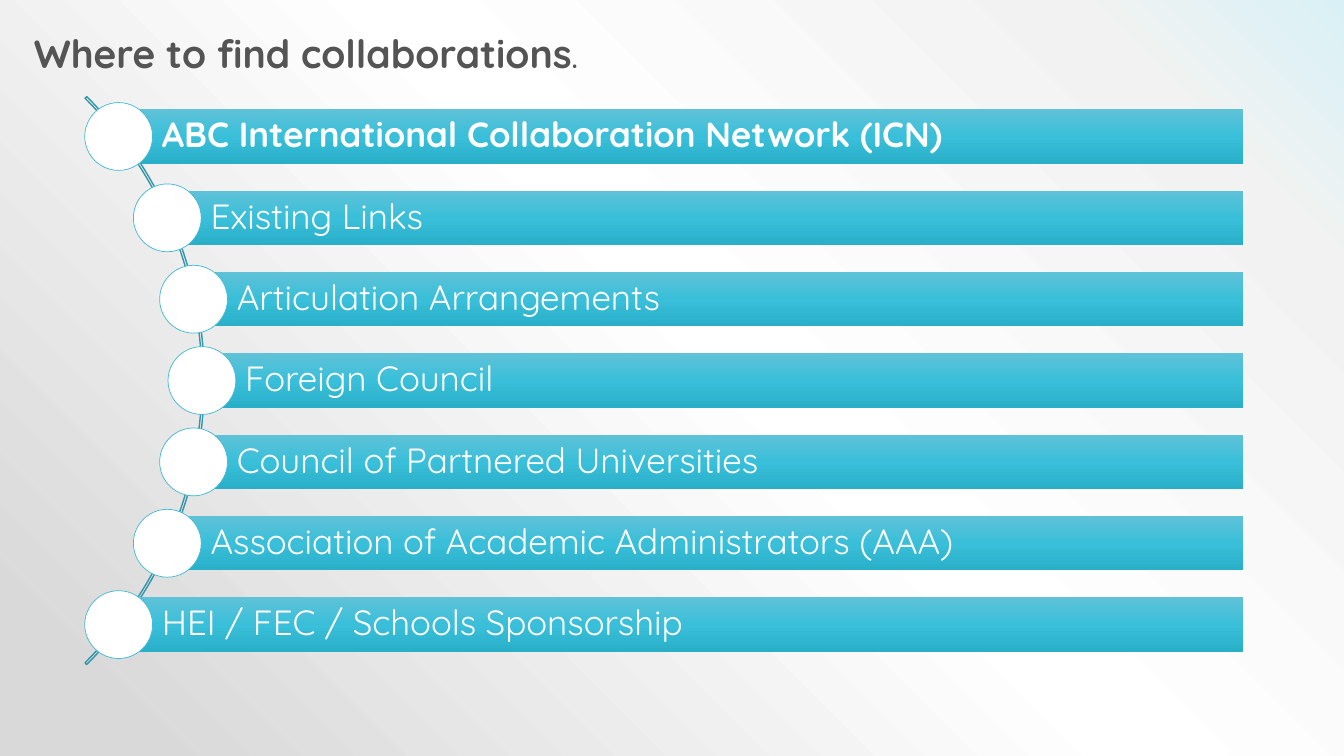
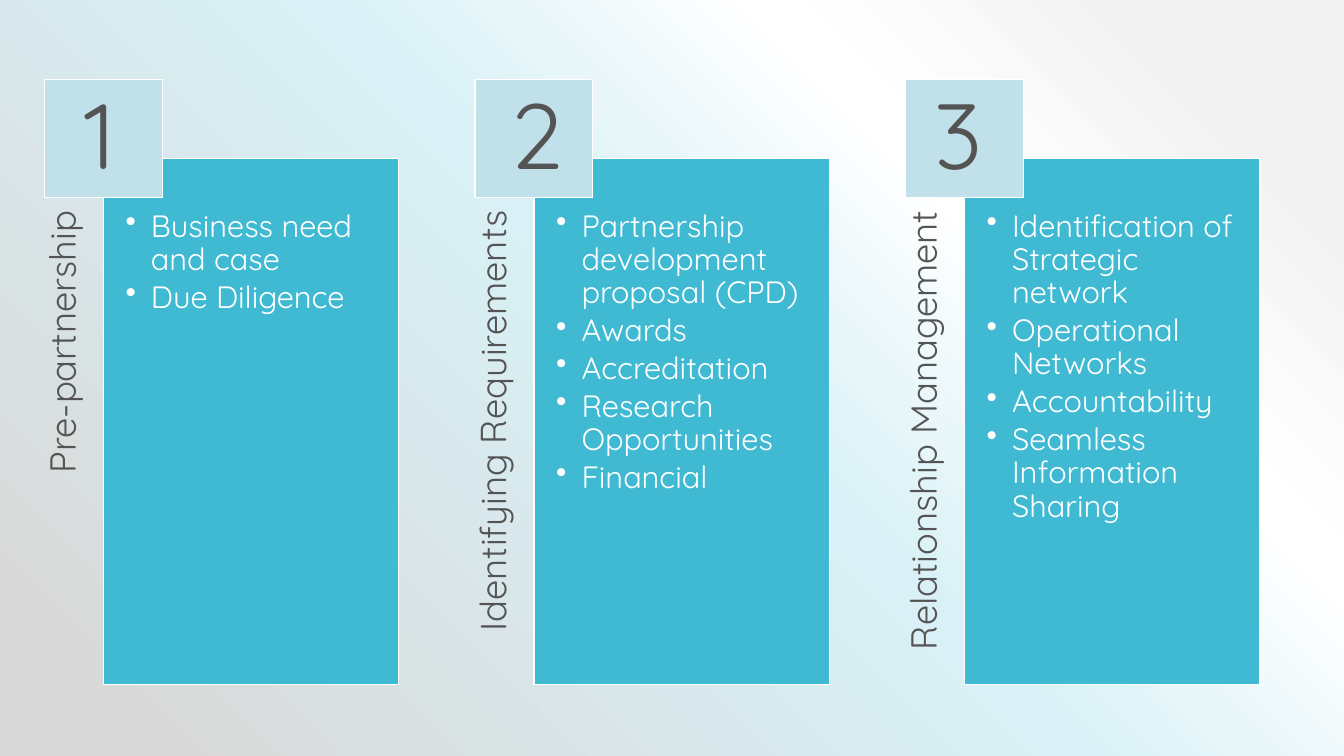
from math import sqrt
from pptx import Presentation
from pptx.dml.color import RGBColor
from pptx.enum.shapes import MSO_SHAPE
from pptx.enum.text import MSO_ANCHOR, PP_ALIGN
from pptx.oxml import parse_xml
from pptx.oxml.ns import nsdecls, qn
from pptx.util import Cm, Pt
from lxml.etree import SubElement

FONT = "Quicksand"
INK, WHITE, TEAL, PALE, RIM = "545454", "FFFFFF", "40BAD2", "C0E0EA", "3395A8"
BAR = [(0, "5FC2D8"), (50, "39BFD9"), (100, "2AAFC9")]
DOWN = '<a:lin ang="5400000" scaled="0"/>'
CORNER = '<a:path path="circle"><a:fillToRect l="100000" b="100000"/></a:path>'

LINKS = [
    "ABC International Collaboration Network (ICN)",
    "Existing Links",
    "Articulation Arrangements",
    "Foreign Council",
    "Council of Partnered Universities",
    "Association of Academic Administrators (AAA)",
    "HEI / FEC / Schools Sponsorship",
]
STAGES = [
    ("1", 0.2, "Pre-partnership", ["Business need and case", "Due Diligence"]),
    ("2", 0.36, "Identifying Requirements",
     ["Partnership development proposal (CPD)", "Awards", "Accreditation",
      "Research Opportunities", "Financial"]),
    ("3", 0.13, "Relationship Management",
     ["Identification of Strategic network", "Operational Networks",
      "Accountability", "Seamless Information Sharing"]),
]


def tint(code):
    return RGBColor.from_string(code)


def blend(fill, root, stops, way):
    fill.solid()
    fill.fore_color.rgb = tint(WHITE)
    old = root.xpath(".//a:solidFill")[0]
    marks = "".join(f'<a:gs pos="{at * 1000}"><a:srgbClr val="{code}"/></a:gs>'
                    for at, code in stops)
    new = parse_xml(f'<a:gradFill rotWithShape="1" {nsdecls("a")}>'
                    f'<a:gsLst>{marks}</a:gsLst>{way}</a:gradFill>')
    old.getparent().replace(old, new)


def page(deck, stops):
    slide = deck.slides.add_slide(deck.slide_layouts[6])
    blend(slide.background.fill, slide.element, stops, CORNER)
    return slide


def form(slide, kind, x, y, w, h, fill=None, line=None, width=1):
    shape = slide.shapes.add_shape(kind, Cm(x), Cm(y), Cm(w), Cm(h))
    shape.shadow.inherit = False
    if isinstance(fill, list):
        blend(shape.fill, shape.element, fill, DOWN)
    elif fill:
        shape.fill.solid()
        shape.fill.fore_color.rgb = tint(fill)
    else:
        shape.fill.background()
    if line:
        shape.line.color.rgb = tint(line)
        shape.line.width = Pt(width)
    else:
        shape.line.fill.background()
    return shape


def field(slide, x, y, w, h):
    return slide.shapes.add_textbox(Cm(x), Cm(y), Cm(w), Cm(h))


def write(shape, *lines, size=22, color=INK, bold=False, align=PP_ALIGN.LEFT,
          anchor=MSO_ANCHOR.TOP, inset=(0.25, 0.13, 0.25, 0.13), after=0,
          bullet=False):
    frame = shape.text_frame
    frame.word_wrap = True
    frame.vertical_anchor = anchor
    (frame.margin_left, frame.margin_top,
     frame.margin_right, frame.margin_bottom) = map(Cm, inset)
    for i, line in enumerate(lines):
        para = frame.add_paragraph() if i else frame.paragraphs[0]
        para.alignment = align
        para.line_spacing = 0.9
        para.space_after = Pt(after)
        if bullet:
            prop = para._p.get_or_add_pPr()
            prop.set("marL", str(Cm(0.64)))
            prop.set("indent", str(-Cm(0.64)))
            SubElement(prop, qn("a:buChar")).set("char", "•")
        runs = line if isinstance(line, list) else [(line, size)]
        for text, points in runs:
            run = para.add_run()
            run.text = text
            font = run.font
            font.name, font.size, font.bold = FONT, Pt(points), bold
            font.color.rgb = tint(color)


def curve(slide, x, y, size, right):
    arc = form(slide, MSO_SHAPE.BLOCK_ARC, x, y, size, size, line=RIM)
    for i, value in enumerate((189, 27, 0.003)):
        arc.adjustments[i] = value
    mid_x, mid_y, reach = x + size / 2, y + size / 2, size / 2 - 0.06
    step, high, dot = 2.05, 1.37, 1.71
    for i, text in enumerate(LINKS):
        shift = (i - (len(LINKS) - 1) / 2) * step
        left = mid_x + sqrt(reach ** 2 - shift ** 2)
        row = mid_y + shift
        bar = form(slide, MSO_SHAPE.RECTANGLE, left, row - high / 2,
                   right - left, high, BAR)
        write(bar, text, size=25, color=WHITE, bold=i == 0,
              anchor=MSO_ANCHOR.MIDDLE, inset=(1.09, 0.18, 0.18, 0.18))
        form(slide, MSO_SHAPE.OVAL, left - dot / 2, row - dot / 2,
             dot, dot, WHITE, TEAL, 0.5)


def stage(slide, x, y, w, h, digit, nudge, name, points):
    badge = 2.97
    half, top = badge / 2, y + badge * 2 / 3
    tall = y + h - top
    side = field(slide, x + half / 2 - tall / 2, top + tall / 2 - half / 2,
                 tall, half)
    side.rotation = 270
    write(side, name, size=26, align=PP_ALIGN.RIGHT, inset=(0, 0, 1.32, 0))
    panel = form(slide, MSO_SHAPE.RECTANGLE, x + half, top, w - half, tall,
                 TEAL, WHITE)
    write(panel, *points, color=WHITE, inset=(0.56, 1.32, 0.56, 0.56),
          after=3.3, bullet=True)
    form(slide, MSO_SHAPE.RECTANGLE, x, y, badge, badge, PALE, WHITE)
    write(field(slide, x + nudge, y + 0.13, 2.39, 2.79), digit, size=66,
          align=PP_ALIGN.CENTER)


def main():
    deck = Presentation()
    deck.slide_width, deck.slide_height = Cm(33.87), Cm(19.05)

    slide = page(deck, [(0, "D9F1F6"), (13, "F2F2F2"), (46, "FFFFFF"),
                        (93, "D9D9D9")])
    write(field(slide, 0, 0.74, 15.42, 1.35),
          [("Where to find collaborations", 28), (".", 18)],
          bold=True, align=PP_ALIGN.CENTER)
    curve(slide, -15.09, -0.53, 20.24, 31.33)

    slide = page(deck, [(10, "F2F2F2"), (28, "FFFFFF"), (48, "D9F1F6"),
                        (93, "D9D9D9")])
    for i, parts in enumerate(STAGES):
        stage(slide, 1.12 + i * 10.85, 2.01, 8.93, 15.24, *parts)

    deck.save("out.pptx")


if __name__ == "__main__":
    main()
